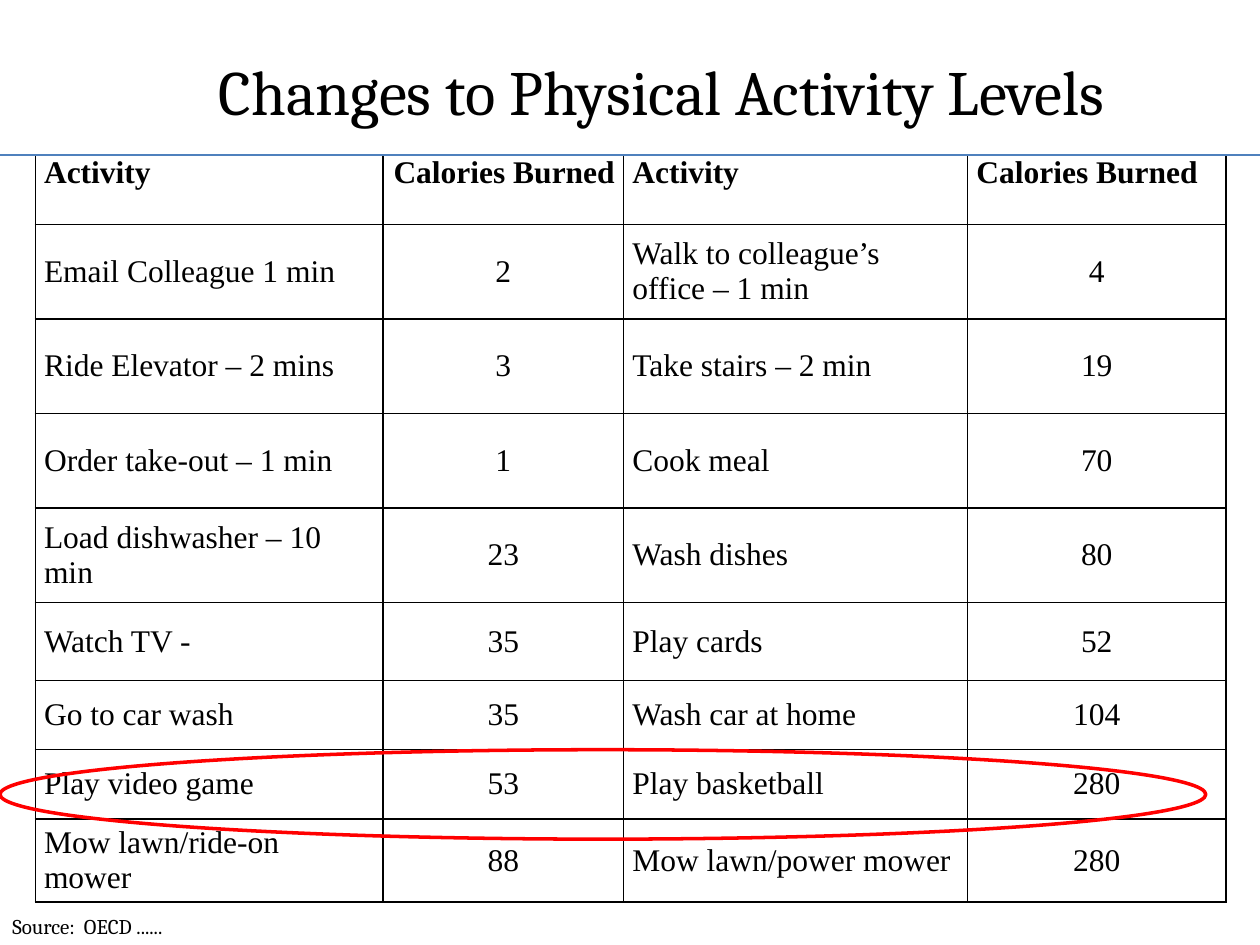
import pptx
import pptx.util
import pptx.dml.color
import pptx.enum.shapes
import pptx.enum.text
import pptx.oxml
import pptx.oxml.ns
from lxml import etree

Inches = pptx.util.Inches
Pt = pptx.util.Pt
ALIGN = pptx.enum.text.PP_ALIGN
ANCHOR = pptx.enum.text.MSO_ANCHOR

BLACK = pptx.dml.color.RGBColor(0x00, 0x00, 0x00)
BLUE = pptx.dml.color.RGBColor(0x4F, 0x81, 0xBD)
RED = pptx.dml.color.RGBColor(0xFF, 0x00, 0x00)

TITLE_FONT = {"name": "Cambria", "size": Pt(36), "bold": False}
SOURCE_FONT = {"name": "Cambria", "size": Pt(12)}
HEADER_FONT = {"name": "Times New Roman", "size": Pt(18), "bold": True}
BODY_FONT = {**HEADER_FONT, "bold": False}
CELL_FORMAT = {
    "margin_left": Inches(0.07),
    "margin_right": Inches(0.07),
    "margin_top": 0,
    "margin_bottom": 0,
}

COLUMN_WIDTHS = [2.76, 1.91, 2.73, 2.05]
ROW_HEIGHTS = [0.55] + [0.75] * 4 + [0.62, 0.55, 0.55, 0.66]
HEADER_ALIGNMENTS = [ALIGN.LEFT, ALIGN.RIGHT, ALIGN.LEFT, ALIGN.LEFT]
BODY_ALIGNMENTS = [ALIGN.LEFT, ALIGN.CENTER] * 2
ACTIVITIES = [
    ["Activity", "Calories Burned", "Activity", "Calories Burned"],
    ["Email Colleague 1 min", "2", "Walk to colleague’s office – 1 min", "4"],
    ["Ride Elevator – 2 mins", "3", "Take stairs – 2 min", "19"],
    ["Order take-out – 1 min", "1", "Cook meal", "70"],
    ["Load dishwasher – 10 min", "23", "Wash dishes", "80"],
    ["Watch TV -", "35", "Play cards", "52"],
    ["Go to car wash", "35", "Wash car at home", "104"],
    ["Play video game", "53", "Play basketball", "280"],
    ["Mow lawn/ride-on mower", "88", "Mow lawn/power mower", "280"],
]


def apply_format(target, values):
    for name, value in values.items():
        setattr(target, name, value)


def write(frame, text, font, alignment):
    paragraph = frame.paragraphs[0]
    paragraph.alignment = alignment
    run = paragraph.add_run()
    run.text = text
    apply_format(run.font, font)
    run.font.color.rgb = BLACK


def add_borders(cell):
    properties = cell._tc.get_or_add_tcPr()
    for position, side in enumerate(("lnL", "lnR", "lnT", "lnB")):
        border = pptx.oxml.parse_xml(
            f'<a:{side} {pptx.oxml.ns.nsdecls("a")} w="{Pt(1)}">'
            f'<a:solidFill><a:srgbClr val="{BLACK}"/></a:solidFill></a:{side}>'
        )
        properties.insert(position, border)


def place_title(slide, box):
    title = slide.shapes.title
    apply_format(title, dict(zip(("left", "top", "width", "height"), box)))
    apply_format(title.text_frame, {"word_wrap": True, "vertical_anchor": ANCHOR.MIDDLE})
    write(title.text_frame, "Changes to Physical Activity Levels", TITLE_FONT, ALIGN.CENTER)


def place_activities(slide, box):
    frame = slide.shapes.add_table(len(ROW_HEIGHTS), len(COLUMN_WIDTHS), *box)
    table = frame.table
    apply_format(table, {"first_row": False, "horz_banding": False})
    for column, width in zip(table.columns, COLUMN_WIDTHS):
        column.width = Inches(width)
    for row, height in zip(table.rows, ROW_HEIGHTS):
        row.height = Inches(height)
    for r, entries in enumerate(ACTIVITIES):
        font = BODY_FONT if r else HEADER_FONT
        alignments = BODY_ALIGNMENTS if r else HEADER_ALIGNMENTS
        anchor = ANCHOR.MIDDLE if r else ANCHOR.TOP
        for c, (entry, alignment) in enumerate(zip(entries, alignments)):
            cell = table.cell(r, c)
            apply_format(cell, {**CELL_FORMAT, "vertical_anchor": anchor})
            cell.fill.background()
            add_borders(cell)
            write(cell.text_frame, entry, font, alignment)


def place_divider(slide, left, top, width):
    divider = slide.shapes.add_connector(
        pptx.enum.shapes.MSO_CONNECTOR.STRAIGHT, left, top, left + width, top
    )
    divider.line.color.rgb = BLUE
    divider.line.width = Pt(1.5)
    etree.SubElement(divider._element.spPr, pptx.oxml.ns.qn("a:effectLst"))


def place_source(slide, box):
    source = slide.shapes.add_textbox(*box)
    source.text_frame.word_wrap = True
    write(source.text_frame, "Source:  OECD ......", SOURCE_FONT, ALIGN.LEFT)


def place_highlight(slide, box):
    highlight = slide.shapes.add_shape(pptx.enum.shapes.MSO_SHAPE.OVAL, *box)
    highlight.shadow.inherit = False
    highlight.fill.background()
    highlight.line.color.rgb = RED
    highlight.line.width = Pt(2)


def main():
    deck = pptx.Presentation()
    deck.slide_width, deck.slide_height = Inches(10), Inches(7.5)
    slide = deck.slides.add_slide(deck.slide_layouts.get_by_name("Title Only"))
    place_title(slide, [Inches(v) for v in (0.75, 0.29, 9, 0.85)])
    place_activities(
        slide,
        [Inches(v) for v in (0.28, 1.23, sum(COLUMN_WIDTHS), sum(ROW_HEIGHTS))],
    )
    place_divider(slide, 0, Inches(1.23), deck.slide_width)
    place_source(slide, [Inches(v) for v in (0, 7.2, 4.13, 0.3)])
    place_highlight(slide, [Inches(v) for v in (0, 5.95, 9.57, 0.71)])
    deck.save("out.pptx")


if __name__ == "__main__":
    main()
